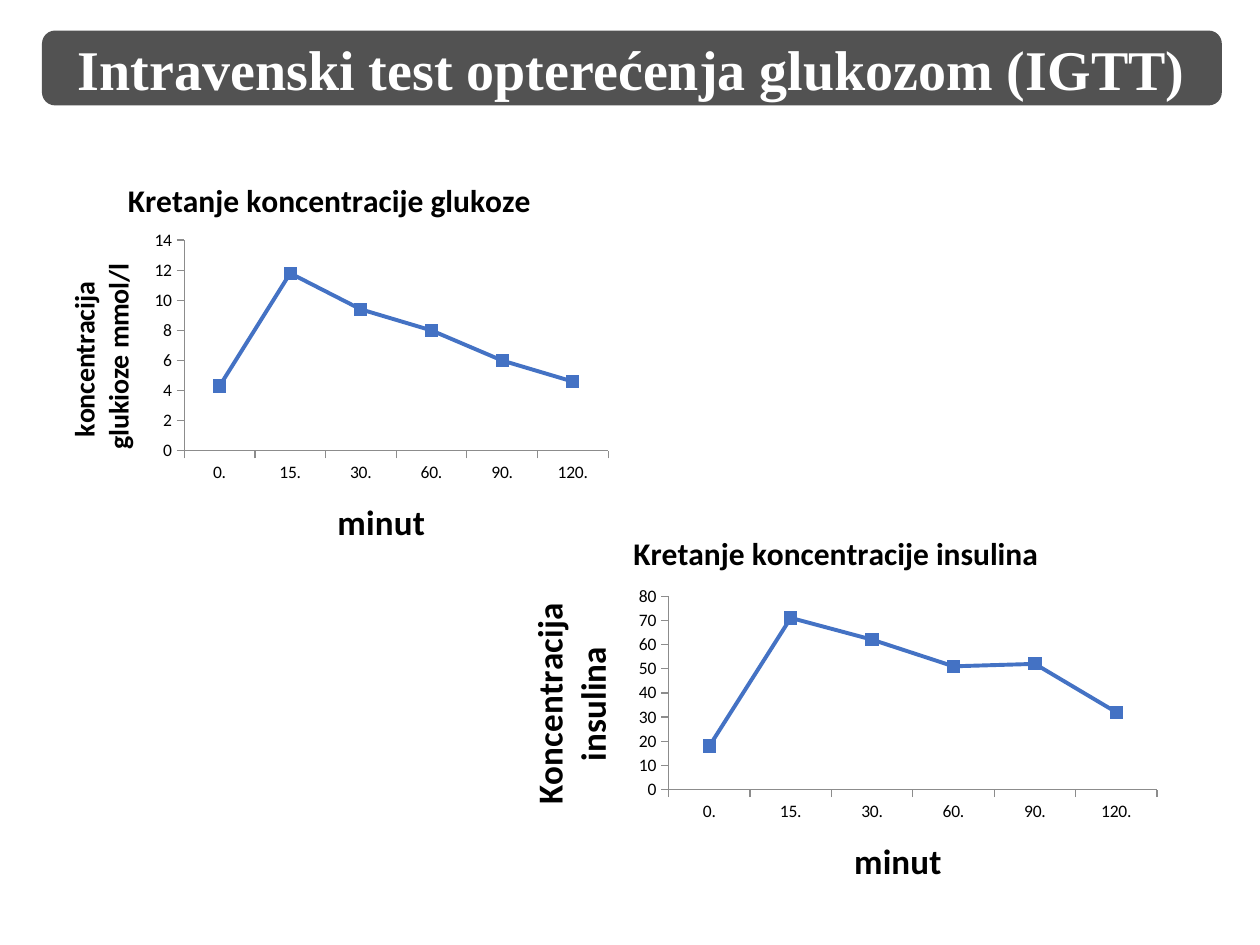
from lxml import etree
from pptx import Presentation
from pptx.chart.data import CategoryChartData as ChartData
from pptx.dml.color import RGBColor as Color
from pptx.enum.chart import XL_CHART_TYPE as ChartType, XL_MARKER_STYLE as Marker, XL_TICK_MARK as Tick
from pptx.enum.shapes import MSO_SHAPE as Preset
from pptx.enum.text import MSO_ANCHOR as Anchor, PP_ALIGN as Align
from pptx.oxml.ns import qn
from pptx.util import Inches, Pt

COLORS = {"banner": "525252", "white": "FFFFFF", "text": "000000",
          "series": "4472C4", "axis": "8C8C8C"}
MINUTES = ["0.", "15.", "30.", "60.", "90.", "120."]

presentation = Presentation()
presentation.slide_width = Inches(10)
presentation.slide_height = Inches(7.5)
slide = presentation.slides.add_slide(presentation.slide_layouts[6])


def place(left, top, width, height):
    slide_width, slide_height = presentation.slide_width, presentation.slide_height
    return [int(share * size / 100) for share, size in
            zip((left, top, width, height), (slide_width, slide_height) * 2)]


def style_font(font, color, **values):
    for name, value in values.items():
        setattr(font, name, value)
    font.color.rgb = Color.from_string(COLORS[color])


banner = slide.shapes.add_shape(Preset.ROUNDED_RECTANGLE, *place(3.4, 3.33, 93.5, 7.73))
banner.shadow.inherit = False
banner.fill.solid()
banner.fill.fore_color.rgb = Color.from_string(COLORS["banner"])
banner.line.color.rgb = Color.from_string(COLORS["banner"])
banner.line.width = Pt(1)
banner.text_frame.word_wrap = True
banner.text_frame.vertical_anchor = Anchor.MIDDLE
paragraph = banner.text_frame.paragraphs[0]
paragraph.alignment = Align.CENTER
run = paragraph.add_run()
run.text = "Intravenski test opterećenja glukozom (IGTT)"
style_font(run.font, "white", name="Times New Roman", size=Pt(32), bold=True)

charts = [
    {"box": (3.1, 16.67, 46.1, 43.73), "title": "Kretanje koncentracije glukoze",
     "axis_title": "koncentracija \nglukioze mmol/l", "axis_size": 16,
     "values": [4.3, 11.8, 9.4, 8, 6, 4.6], "maximum": 14, "step": 2,
     "plot": {"x": 0.25, "y": 0.2, "w": 0.73, "h": 0.51}},
    {"box": (39.8, 54.13, 53.1, 42.67), "title": "Kretanje koncentracije insulina",
     "axis_title": "Koncentracija insulina", "axis_size": 20,
     "values": [18, 71, 62, 51, 52, 32], "maximum": 80, "step": 10,
     "plot": {"x": 0.25, "y": 0.21, "w": 0.73, "h": 0.48}},
]

for item in charts:
    data = ChartData()
    data.categories = MINUTES
    data.add_series("Series 1", item["values"])
    chart = slide.shapes.add_chart(ChartType.LINE_MARKERS, *place(*item["box"]), data).chart
    chart.has_legend = False
    style_font(chart.font, "text", name="Calibri", size=Pt(10))
    chart.has_title = True
    category_axis, value_axis = chart.category_axis, chart.value_axis
    value_axis.minimum_scale = 0
    value_axis.maximum_scale = item["maximum"]
    value_axis.major_unit = item["step"]
    value_axis.has_major_gridlines = False

    for axis in (category_axis, value_axis):
        axis.has_title = True
        axis.major_tick_mark = Tick.OUTSIDE
        axis.minor_tick_mark = Tick.NONE
        axis.format.line.color.rgb = Color.from_string(COLORS["axis"])
        axis.format.line.width = Pt(0.75)

    for title, text, size in (
            (chart.chart_title, item["title"], 18),
            (category_axis.axis_title, "minut", 20),
            (value_axis.axis_title, item["axis_title"], item["axis_size"])):
        title.text_frame.text = text
        for paragraph in title.text_frame.paragraphs:
            for run in paragraph.runs:
                style_font(run.font, "text", name="Calibri", size=Pt(size), bold=True)

    plot = chart.plots[0]
    plot.vary_by_categories = False
    series = plot.series[0]
    series.smooth = False
    series.format.line.color.rgb = Color.from_string(COLORS["series"])
    series.format.line.width = Pt(2.25)
    series.marker.style = Marker.SQUARE
    series.marker.size = 7
    series.marker.format.fill.solid()
    series.marker.format.fill.fore_color.rgb = Color.from_string(COLORS["series"])
    series.marker.format.line.color.rgb = Color.from_string(COLORS["series"])

    plot_area = chart.element.find(".//" + qn("c:plotArea"))
    for old_layout in plot_area.findall(qn("c:layout")):
        plot_area.remove(old_layout)
    layout = etree.Element(qn("c:layout"))
    plot_area.insert(0, layout)
    manual = etree.SubElement(layout, qn("c:manualLayout"))
    settings = {"layoutTarget": "inner", "xMode": "edge", "yMode": "edge", **item["plot"]}
    for name, value in settings.items():
        etree.SubElement(manual, qn("c:" + name)).set("val", str(value))

presentation.save("out.pptx")
